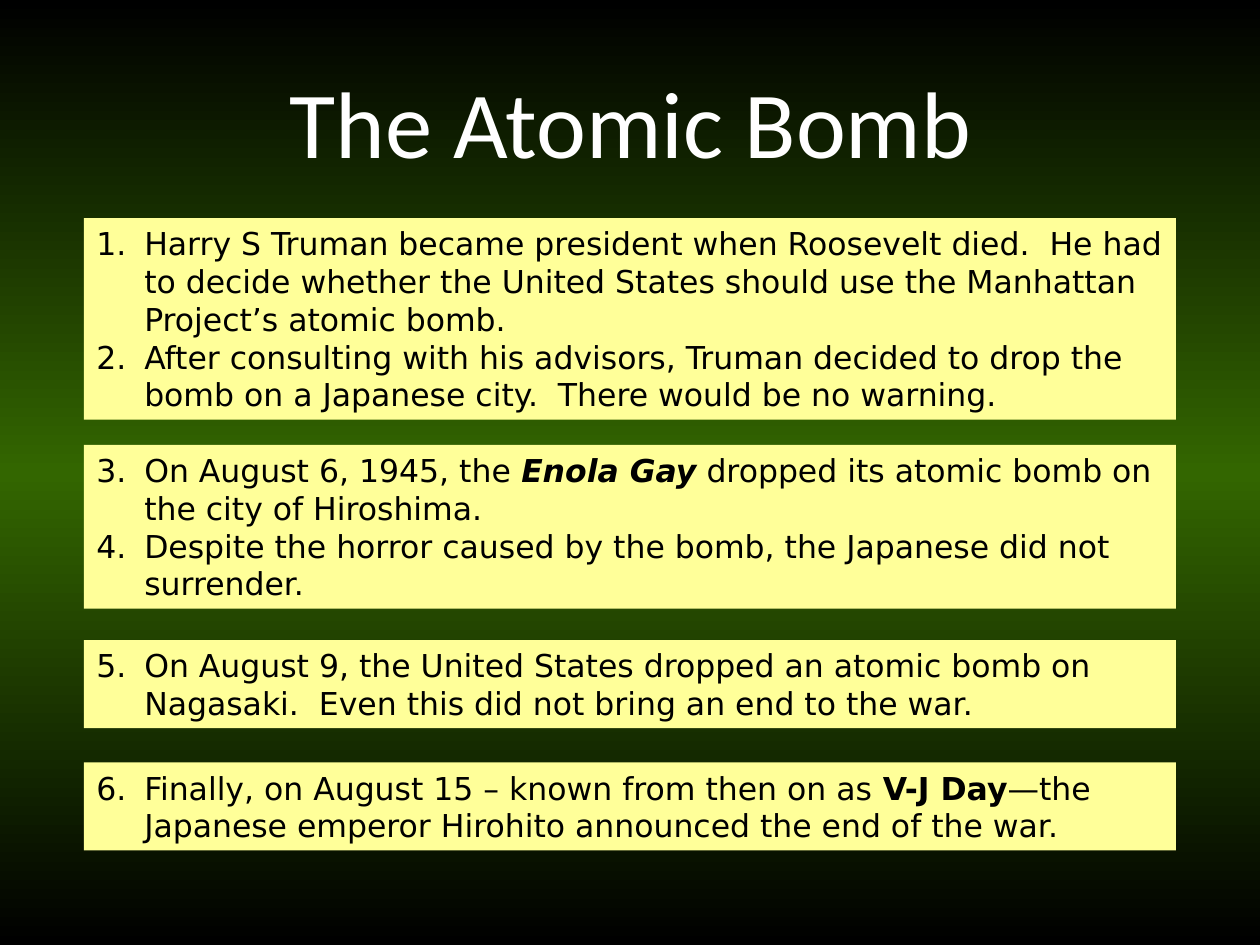
import copy
from dataclasses import dataclass

import pptx
import pptx.dml.color
import pptx.enum.shapes
import pptx.enum.text
import pptx.oxml.ns
import pptx.slide
import pptx.text.text
import pptx.util

RGBColor = pptx.dml.color.RGBColor
BLACK = RGBColor(0x00, 0x00, 0x00)
GREEN = RGBColor(0x33, 0x66, 0x00)
CREAM = RGBColor(0xFF, 0xFF, 0x99)
WHITE = RGBColor(0xFF, 0xFF, 0xFF)

# Grid: 15 columns by 100 rows
COLUMN = pptx.util.Inches(10 / 15)
ROW = pptx.util.Inches(7.5 / 100)
LINE_ROWS = 4
PADDING_ROWS = 1.33
INDENT = pptx.util.Inches(0.38)


@dataclass
class Span:
    text: str
    bold: bool = False
    italic: bool = False


@dataclass
class Panel:
    top_row: float
    lines: int
    first_number: int
    items: list[list[Span]]


PANELS = [
    Panel(23.07, 5, 1, [
        [Span("Harry S Truman became president when Roosevelt died.  He had to decide "
              "whether the United States should use the Manhattan Project’s atomic bomb.")],
        [Span("After consulting with his advisors, Truman decided to drop the bomb on "
              "a Japanese city.  There would be no warning.")],
    ]),
    Panel(47.07, 4, 3, [
        [Span("On August 6, 1945, the "), Span("Enola Gay", bold=True, italic=True),
         Span(" dropped its atomic bomb on the city of Hiroshima.")],
        [Span("Despite the horror caused by the bomb, the Japanese did not surrender.")],
    ]),
    Panel(67.73, 2, 5, [
        [Span("On August 9, the United States dropped an atomic bomb on Nagasaki.  "
              "Even this did not bring an end to the war.")],
    ]),
    Panel(80.67, 2, 6, [
        [Span("Finally, on August 15 – known from then on as "), Span("V-J Day", bold=True),
         Span("—the Japanese emperor Hirohito announced the end of the war.")],
    ]),
]


def paint_background(page: pptx.slide.Slide) -> None:
    """Fade from black through green and back to black, top to bottom."""
    fill = page.background.fill
    fill.gradient()
    fill.gradient_angle = 90
    stop_list = page.element.find(".//" + pptx.oxml.ns.qn("a:gsLst"))
    stop_list.insert(1, copy.deepcopy(stop_list[0]))
    for stop, position, color in zip(fill.gradient_stops, (0, 0.5, 1), (BLACK, GREEN, BLACK)):
        stop.position = position
        stop.color.rgb = color


def style_font(para: pptx.text.text._Paragraph, name: str, size: int, color: RGBColor) -> None:
    para.font.name = name
    para.font.size = pptx.util.Pt(size)
    para.font.color.rgb = color


def number_paragraph(para: pptx.text.text._Paragraph, start: int) -> None:
    properties = para._p.get_or_add_pPr()
    properties.set("marL", str(INDENT))
    properties.set("indent", str(-INDENT))
    numbering = pptx.oxml.parse_xml(
        f'<a:buAutoNum {pptx.oxml.ns.nsdecls("a")} type="arabicPeriod" startAt="{start}"/>')
    properties.insert_element_before(numbering, "a:tabLst", "a:defRPr", "a:extLst")


def add_title(page: pptx.slide.Slide, text: str) -> None:
    box = page.shapes.add_textbox(
        pptx.util.Inches(0.42), pptx.util.Inches(0.67),
        pptx.util.Inches(9.17), pptx.util.Inches(0.58))
    frame = box.text_frame
    frame.word_wrap = True
    frame.vertical_anchor = pptx.enum.text.MSO_ANCHOR.MIDDLE
    para = frame.paragraphs[0]
    para.text = text
    para.alignment = pptx.enum.text.PP_ALIGN.CENTER
    style_font(para, "Calibri", 54, WHITE)


def add_panel(page: pptx.slide.Slide, panel: Panel) -> None:
    height = round((panel.lines * LINE_ROWS + PADDING_ROWS) * ROW)
    box = page.shapes.add_shape(
        pptx.enum.shapes.MSO_SHAPE.RECTANGLE,
        COLUMN, round(panel.top_row * ROW), 13 * COLUMN, height)
    box.shadow.inherit = False
    box.fill.solid()
    box.fill.fore_color.rgb = CREAM
    box.line.fill.background()
    frame = box.text_frame
    frame.word_wrap = True
    frame.auto_size = pptx.enum.text.MSO_AUTO_SIZE.SHAPE_TO_FIT_TEXT
    frame.vertical_anchor = pptx.enum.text.MSO_ANCHOR.TOP
    for index, item in enumerate(panel.items):
        para = frame.add_paragraph() if index else frame.paragraphs[0]
        para.alignment = pptx.enum.text.PP_ALIGN.LEFT
        style_font(para, "DejaVu Sans", 18, BLACK)
        number_paragraph(para, panel.first_number)
        for span in item:
            run = para.add_run()
            run.text = span.text
            if span.bold:
                run.font.bold = True
            if span.italic:
                run.font.italic = True


def main() -> None:
    deck = pptx.Presentation()
    deck.slide_width = pptx.util.Inches(10)
    deck.slide_height = pptx.util.Inches(7.5)
    page = deck.slides.add_slide(deck.slide_layouts[6])
    paint_background(page)
    add_title(page, "The Atomic Bomb")
    # Numbered statements, counted on from panel to panel
    for panel in PANELS:
        add_panel(page, panel)
    deck.save("out.pptx")


if __name__ == "__main__":
    main()
